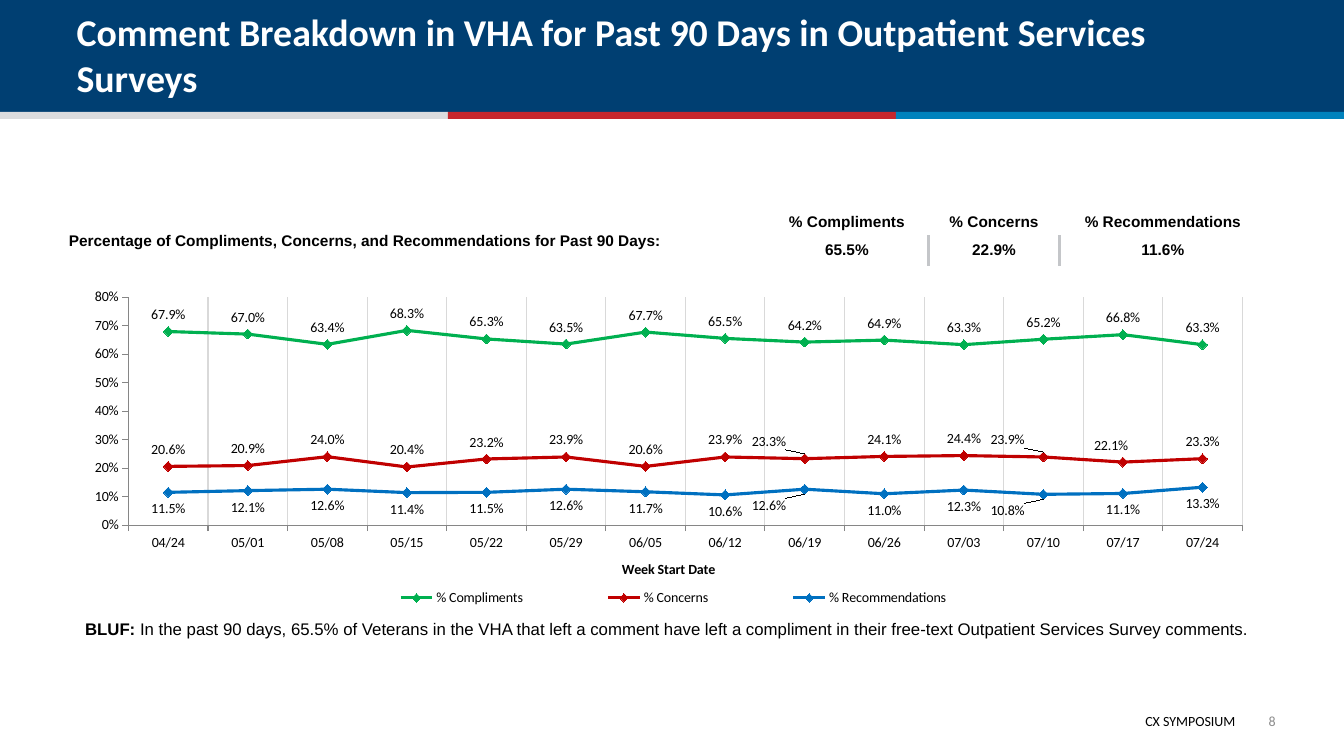
"""Build the weekly comment breakdown slide."""
import pptx
import pptx.chart.data
import pptx.dml.color
import pptx.enum.chart
import pptx.enum.shapes
import pptx.enum.text
import pptx.oxml
import pptx.oxml.ns
import pptx.util

Pt = pptx.util.Pt
Align = pptx.enum.text.PP_ALIGN
Anchor = pptx.enum.text.MSO_ANCHOR
Spot = pptx.enum.chart.XL_LABEL_POSITION
Tick = pptx.enum.chart.XL_TICK_MARK
NS = pptx.oxml.ns.nsdecls

THEME = {
    "navy": "003F72", "stripe": ["DBDCDE", "C6262D", "0082BD"],
    "ink": "000000", "white": "FFFFFF", "muted": "8C8C8C",
    "rule": "C4C6C9", "grid": "D9D9D9", "axis": "868686",
    "lines": ["00B050", "C00000", "0070C0"],
    "head": "Calibri", "body": "Arial",
    "title": 27, "note": 12, "label": 11, "small": 10,
}

deck = pptx.Presentation()
deck.slide_width = pptx.util.Inches(13.33)
deck.slide_height = pptx.util.Inches(7.5)
W, H = deck.slide_width, deck.slide_height
slide = deck.slides.add_slide(deck.slide_layouts[5])
shapes = slide.shapes


def area(x, y, w, h):
    """Turn percent shares of the slide into lengths."""
    return [int(n * side / 100) for n, side in ((x, W), (y, H), (w, W), (h, H))]


def style(font, size, color="ink", face="body", bold=False):
    """Format a font from the theme."""
    font.size, font.name, font.bold = Pt(THEME[size]), THEME[face], bold
    font.color.rgb = pptx.dml.color.RGBColor.from_string(THEME[color])


third = 100 / 3
bands = [(0, 0, 100, 15.2, THEME["navy"])]
bands += [(i * third, 14.8, third, 0.93, hue) for i, hue in enumerate(THEME["stripe"])]
for *place, hue in bands:
    band = shapes.add_shape(pptx.enum.shapes.MSO_SHAPE.RECTANGLE, *area(*place))
    band.shadow.inherit = False
    band.fill.solid()
    band.fill.fore_color.rgb = pptx.dml.color.RGBColor.from_string(hue)
    band.line.fill.background()

title = shapes.title
title.left, title.top, title.width, title.height = area(4.95, 2, 90, 11.87)
frame = title.text_frame
frame.text = "Comment Breakdown in VHA for Past 90 Days in Outpatient Services Surveys"
frame.word_wrap = True
frame.auto_size = pptx.enum.text.MSO_AUTO_SIZE.NONE
frame.vertical_anchor = Anchor.BOTTOM
frame.paragraphs[0].alignment = Align.LEFT
style(frame.paragraphs[0].runs[0].font, "title", "white", "head", True)
shapes.element.append(title.element)

weeks = ["04/24", "05/01", "05/08", "05/15", "05/22", "05/29", "06/05",
         "06/12", "06/19", "06/26", "07/03", "07/10", "07/17", "07/24"]
rates = {
    "% Compliments": [67.9, 67.0, 63.4, 68.3, 65.3, 63.5, 67.7,
                      65.5, 64.2, 64.9, 63.3, 65.2, 66.8, 63.3],
    "% Concerns": [20.6, 20.9, 24.0, 20.4, 23.2, 23.9, 20.6,
                   23.9, 23.3, 24.1, 24.4, 23.9, 22.1, 23.3],
    "% Recommendations": [11.5, 12.1, 12.6, 11.4, 11.5, 12.6, 11.7,
                          10.6, 12.6, 11.0, 12.3, 10.8, 11.1, 13.3],
}
data = pptx.chart.data.CategoryChartData(number_format="0.0%")
data.categories = weeks
for name, vals in rates.items():
    data.add_series(name, [round(v / 100, 3) for v in vals])
chart = shapes.add_chart(pptx.enum.chart.XL_CHART_TYPE.LINE_MARKERS,
                         *area(5.1, 37.47, 89.12, 45.73), data).chart
style(chart.font, "small", face="head")
chart.has_title = False
chart.has_legend = True
chart.legend.position = pptx.enum.chart.XL_LEGEND_POSITION.BOTTOM
chart.legend.include_in_layout = False

cat, val = chart.category_axis, chart.value_axis
cat.has_major_gridlines, val.has_major_gridlines = True, False
cat.axis_title.text_frame.text = "Week Start Date"
style(cat.axis_title.text_frame.paragraphs[0].runs[0].font, "small", face="head", bold=True)
val.minimum_scale, val.maximum_scale, val.major_unit = 0, 0.8, 0.1
val.tick_labels.number_format = "0%"
val.tick_labels.number_format_is_linked = False
for axis in (cat, val):
    axis.major_tick_mark, axis.minor_tick_mark = Tick.OUTSIDE, Tick.NONE
for line, hue in ((cat.format.line, "axis"), (val.format.line, "axis"),
                  (cat.major_gridlines.format.line, "grid")):
    line.width = Pt(0.75)
    line.color.rgb = pptx.dml.color.RGBColor.from_string(THEME[hue])

plot = chart.plots[0]
plot.vary_by_categories = False
spots = [Spot.ABOVE, Spot.ABOVE, Spot.BELOW]
shifts = [{}, {8: -0.03, 11: -0.03, 12: -0.01}, {8: -0.03, 11: -0.03, 12: 0}]
for row, hue, spot, shift in zip(plot.series, THEME["lines"], spots, shifts):
    tint = pptx.dml.color.RGBColor.from_string(hue)
    row.smooth = False
    row.format.line.width = Pt(2.25)
    row.format.line.color.rgb = tint
    row.marker.style = pptx.enum.chart.XL_MARKER_STYLE.DIAMOND
    row.marker.size = 7
    row.marker.format.fill.solid()
    row.marker.format.fill.fore_color.rgb = tint
    row.marker.format.line.color.rgb = tint
    tags = row.data_labels
    tags.show_value = True
    tags.number_format, tags.number_format_is_linked = "0.0%", False
    tags.position = spot
    for week, dx in shift.items():
        row.points[week].data_label.position = spot
        tag = row.points[week].data_label._get_or_add_dLbl()
        tag.insert(1, pptx.oxml.parse_xml(
            f'<c:layout {NS("c")}><c:manualLayout><c:x val="{dx}"/>'
            '<c:y val="0"/></c:manualLayout></c:layout>'))

root = chart.element.find(pptx.oxml.ns.qn("c:chart"))
parts = [("c:plotArea", 0, '<c:layoutTarget val="inner"/>', (0.05, 0.04, 0.93, 0.66)),
         ("c:legend", 1, "", (0.21, 0.86, 0.59, 0.1))]
for kind, slot, aim, (x, y, w, h) in parts:
    part = root.find(pptx.oxml.ns.qn(kind))
    for old in part.findall(pptx.oxml.ns.qn("c:layout")):
        part.remove(old)
    part.insert(slot, pptx.oxml.parse_xml(
        f'<c:layout {NS("c")}><c:manualLayout>{aim}<c:xMode val="edge"/>'
        f'<c:yMode val="edge"/><c:x val="{x}"/><c:y val="{y}"/>'
        f'<c:w val="{w}"/><c:h val="{h}"/></c:manualLayout></c:layout>'))

totals = [list(rates), ["65.5%", "22.9%", "11.6%"]]
table = shapes.add_table(2, 3, *area(56.94, 27.47, 37.28, 7.6)).table
table.first_row = table.horz_banding = False
for col, share in zip(table.columns, (12.15, 9.75, 15.38)):
    col.width = int(W * share / 100)
for line, share in zip(table.rows, (3.73, 3.87)):
    line.height = int(H * share / 100)
for r, texts in enumerate(totals):
    for c, text in enumerate(texts):
        cell = table.cell(r, c)
        cell.text = text
        cell.margin_top = cell.margin_bottom = Pt(1)
        cell.vertical_anchor = Anchor.MIDDLE
        para = cell.text_frame.paragraphs[0]
        para.alignment = Align.CENTER
        style(para.runs[0].font, "label", bold=True)
        props = cell._tc.get_or_add_tcPr()
        edges = {"lnL": c > 0, "lnR": c < 2, "lnT": False, "lnB": False}
        for edge, inner in edges.items():
            hue = THEME["rule" if r and inner else "white"]
            wide = Pt(2.25 if inner else 1)
            props.append(pptx.oxml.parse_xml(
                f'<a:{edge} {NS("a")} w="{wide}"><a:solidFill>'
                f'<a:srgbClr val="{hue}"/></a:solidFill></a:{edge}>'))
        cell.fill.background()

notes = [
    ((4.2, 29.87, 45.76, 3.87), Align.RIGHT, "label", "ink", "body",
     [("Percentage of Compliments, Concerns, and Recommendations for Past 90 Days:", True)]),
    ((5.1, 81.2, 89.12, 4), Align.CENTER, "note", "ink", "body",
     [("BLUF:", True),
      (" In the past 90 days, 65.5% of Veterans in the VHA that left a comment have left"
       " a compliment in their free-text Outpatient Services Survey comments.", False)]),
    ((41.34, 93.6, 51.31, 3.6), Align.RIGHT, "small", "ink", "head", [("CX SYMPOSIUM", False)]),
    ((91.45, 93.6, 4.2, 3.6), Align.RIGHT, "small", "muted", "head", [("8", False)]),
]
for place, align, size, hue, face, runs in notes:
    frame = shapes.add_textbox(*area(*place)).text_frame
    frame.word_wrap = True
    para = frame.paragraphs[0]
    para.alignment = align
    for text, bold in runs:
        run = para.add_run()
        run.text = text
        style(run.font, size, hue, face, bold)

deck.save("out.pptx")
